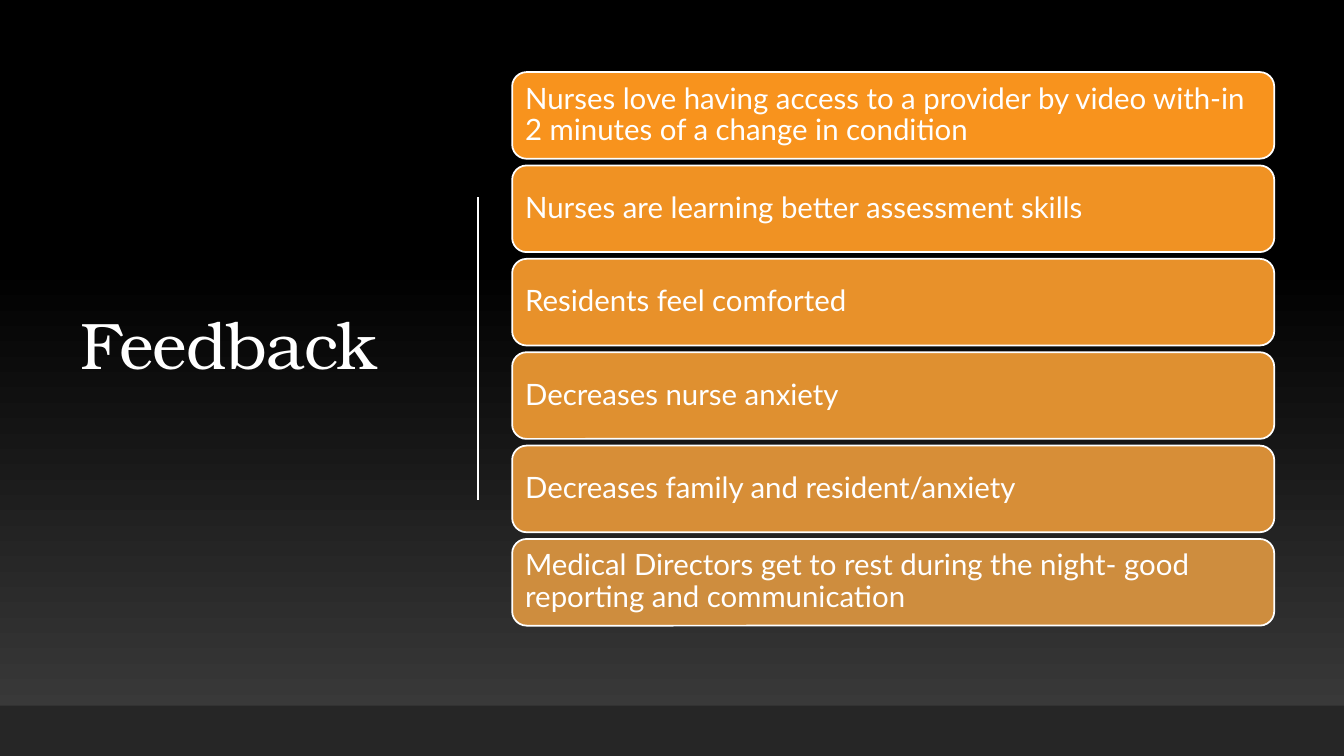
from pptx import Presentation
from pptx.dml.color import RGBColor
from pptx.enum.shapes import MSO_CONNECTOR, MSO_SHAPE
from pptx.enum.text import MSO_ANCHOR, PP_ALIGN
from pptx.oxml.ns import qn
from pptx.util import Pt
from lxml.etree import SubElement

WHITE = "FFFFFF"
FEEDBACK = [
    ("Nurses love having access to a provider by video with-in 2 minutes of a change in condition", "F8931D"),
    ("Nurses are learning better assessment skills", "F09223"),
    ("Residents feel comforted", "E8912A"),
    ("Decreases nurse anxiety", "DF9030"),
    ("Decreases family and resident/anxiety", "D78E37"),
    ("Medical Directors get to rest during the night- good reporting and communication", "CE8D3E"),
]
CARD_LEFT, CARD_TOP, CARD_WIDTH, CARD_HEIGHT = 365.8, 51.5, 544.4, 61.9
CARD_PITCH = 66.7
CARD_INSET = 6.3


def color(hex_string):
    return RGBColor.from_string(hex_string)


def write(frame, text, font_name, size):
    """Fill a frame with one left-aligned, vertically centred white paragraph."""
    frame.word_wrap = True
    frame.vertical_anchor = MSO_ANCHOR.MIDDLE
    frame.text = text
    paragraph = frame.paragraphs[0]
    paragraph.alignment = PP_ALIGN.LEFT
    paragraph.line_spacing = 0.9
    run = paragraph.runs[0]
    run.font.name = font_name
    run.font.size = Pt(size)
    run.font.color.rgb = color(WHITE)
    return run


prs = Presentation()
prs.slide_width, prs.slide_height = Pt(960), Pt(540)
slide = prs.slides.add_slide(prs.slide_layouts[6])
shapes = slide.shapes

# Background: grey at the bottom, black from 65 % upwards
backdrop = slide.background.fill
backdrop.gradient()
backdrop.gradient_angle = 90
for stop, (position, shade) in zip(backdrop.gradient_stops, [(0, "3F3F3F"), (0.65, "000000")]):
    stop.position = position
    stop.color.rgb = color(shade)

footer_band = shapes.add_shape(MSO_SHAPE.RECTANGLE, Pt(0), Pt(504), Pt(960), Pt(36))
footer_band.shadow.inherit = False
footer_band.fill.solid()
footer_band.fill.fore_color.rgb = color("262626")
footer_band.line.fill.background()

# Title and divider
title = shapes.add_textbox(Pt(50.4), Pt(49.7), Pt(265.7), Pt(398.2))
title_run = write(title.text_frame, "Feedback", "TeX Gyre Bonum", 47)
title_run.font._element.set("spc", "-50")

divider = shapes.add_connector(MSO_CONNECTOR.STRAIGHT, Pt(341.4), Pt(141), Pt(341.4), Pt(357))
divider.line.color.rgb = color(WHITE)
divider.line.width = Pt(1)
SubElement(divider._element.spPr, qn("a:effectLst"))

# Feedback cards
for row, (comment, card_color) in enumerate(FEEDBACK):
    card = shapes.add_shape(MSO_SHAPE.ROUNDED_RECTANGLE, Pt(CARD_LEFT), Pt(CARD_TOP + row * CARD_PITCH),
                            Pt(CARD_WIDTH), Pt(CARD_HEIGHT))
    card.shadow.inherit = False
    card.fill.solid()
    card.fill.fore_color.rgb = color(card_color)
    card.line.color.rgb = color(WHITE)
    card.line.width = Pt(1.25)
    frame = card.text_frame
    frame.margin_left = frame.margin_right = Pt(CARD_INSET)
    frame.margin_top = frame.margin_bottom = Pt(CARD_INSET)
    write(frame, comment, "Lato", 21)

prs.save("out.pptx")
